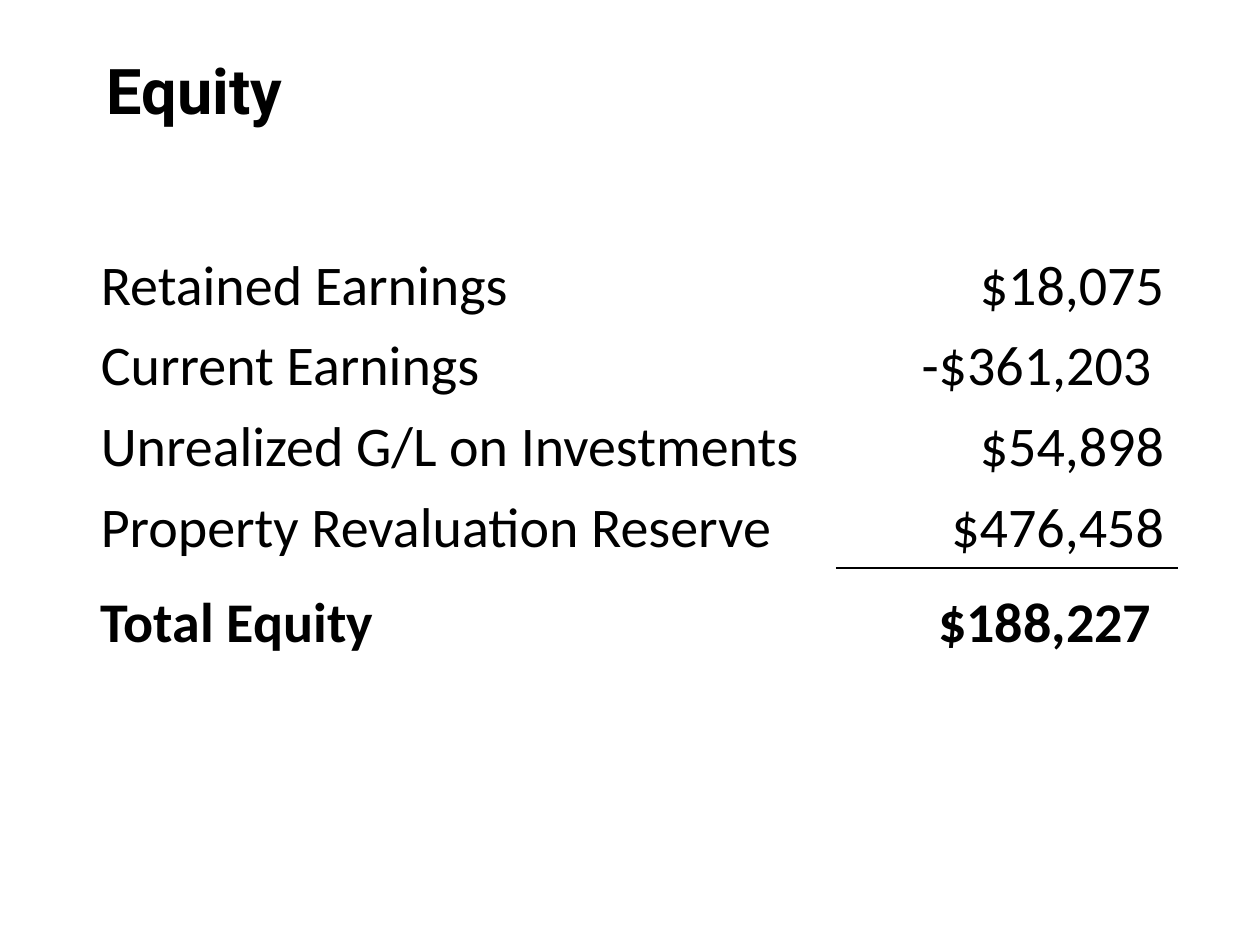
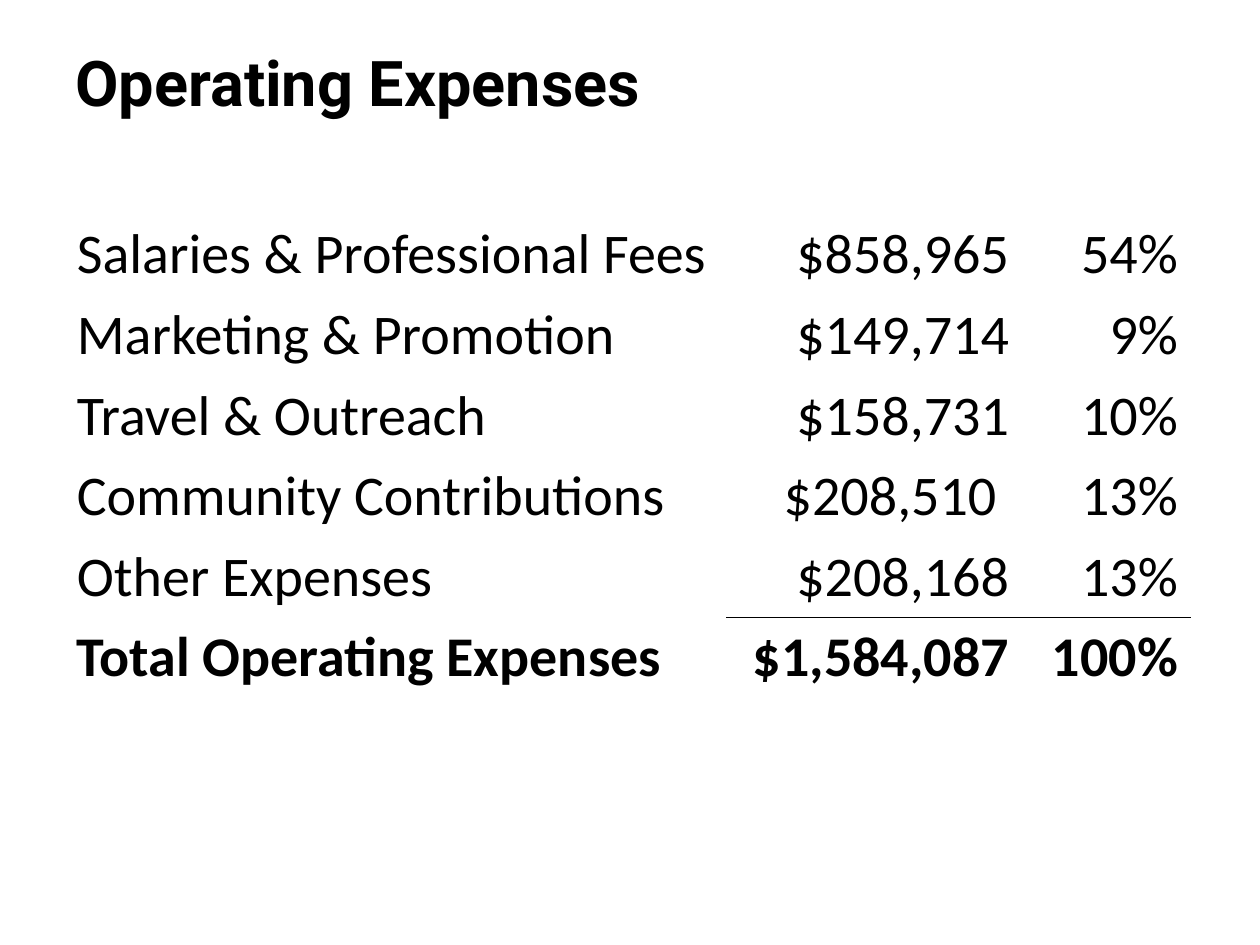
from pptx import Presentation
from pptx.dml.color import RGBColor
from pptx.enum.text import MSO_ANCHOR, PP_ALIGN
from pptx.oxml import parse_xml
from pptx.oxml.ns import nsdecls
from pptx.util import Inches, Pt

BLACK = RGBColor(0x00, 0x00, 0x00)
LEFT, RIGHT = PP_ALIGN.LEFT, PP_ALIGN.RIGHT
TOP, MIDDLE, BOTTOM = MSO_ANCHOR.TOP, MSO_ANCHOR.MIDDLE, MSO_ANCHOR.BOTTOM
TITLE_FONT = {"name": "Roboto", "size": Pt(36), "bold": True}
BODY_FONT = {"name": "Calibri", "size": Pt(32), "bold": False}
TOTAL_FONT = {**BODY_FONT, "bold": True}
ROW_HEIGHT = 0.64

EQUITY = [
    ("Retained Earnings", "$18,075"),
    ("Current Earnings", "-$361,203"),
    ("Unrealized G/L on Investments", "$54,898"),
    ("Property Revaluation Reserve", "$476,458"),
    ("Total Equity", "$188,227"),
]
EXPENSES = [
    ("Salaries & Professional Fees", "$858,965", "54%"),
    ("Marketing & Promotion", "$149,714", "9%"),
    ("Travel & Outreach", "$158,731", "10%"),
    ("Community Contributions", "$208,510", "13%"),
    ("Other Expenses", "$208,168", "13%"),
    ("Total Operating Expenses", "$1,584,087", "100%"),
]


class FinanceDeck:
    def __init__(self):
        self.deck = Presentation()
        self.deck.slide_width, self.deck.slide_height = Inches(10), Inches(7.5)
        self.page = None

    def add_page(self):
        self.page = self.deck.slides.add_slide(self.deck.slide_layouts[6])

    def add_text(self, frame, text, font, align=LEFT):
        para = frame.paragraphs[0]
        para.alignment = align
        span = para.add_run()
        span.text = text
        for name, value in font.items():
            setattr(span.font, name, value)
        span.font.color.rgb = BLACK

    def title(self, text, left, top):
        box = self.page.shapes.add_textbox(
            Inches(left), Inches(top), Inches(9), Inches(0.69))
        box.text_frame.word_wrap = True
        box.text_frame.vertical_anchor = MIDDLE
        self.add_text(box.text_frame, text, TITLE_FONT)

    def rule(self, cell, side):
        """Draw a thin line on the top (T) or bottom (B) edge of a cell."""
        line = parse_xml(
            f'<a:ln{side} {nsdecls("a")} w="12700"><a:solidFill>'
            f'<a:srgbClr val="{BLACK}"/></a:solidFill></a:ln{side}>')
        cell._tc.get_or_add_tcPr().insert(0, line)

    def statement(self, rows, left, top, widths, inset_rows,
                  total_height=ROW_HEIGHT, total_anchor=TOP):
        """Add a table with a ruled total; amounts in inset_rows sit further left."""
        last = len(rows) - 1
        heights = [ROW_HEIGHT] * last + [total_height]
        table = self.page.shapes.add_table(
            len(rows), len(widths), Inches(left), Inches(top),
            Inches(sum(widths)), Inches(sum(heights))).table
        table.first_row = table.horz_banding = False
        for column, width in zip(table.columns, widths):
            column.width = Inches(width)
        for row, height in zip(table.rows, heights):
            row.height = Inches(height)
        for r, values in enumerate(rows):
            for c, value in enumerate(values):
                cell = table.cell(r, c)
                cell.fill.background()
                cell.vertical_anchor = total_anchor if r == last else TOP
                if c == 1 and r in inset_rows:
                    cell.margin_right = Inches(0.2)
                self.add_text(cell.text_frame, value,
                              TOTAL_FONT if r == last else BODY_FONT,
                              RIGHT if c else LEFT)
                if c and r >= last - 1:
                    self.rule(cell, "T" if r == last else "B")


def main():
    finance = FinanceDeck()

    finance.add_page()
    finance.title("Equity", 0.75, 0.36)
    finance.statement(EQUITY, 0.7, 1.95, [5.94, 2.7], {1, 4},
                      total_height=0.76, total_anchor=BOTTOM)

    finance.add_page()
    finance.title("Operating Expenses", 0.5, 0.3)
    finance.statement(EXPENSES, 0.51, 1.7, [5.26, 2.34, 1.34], {3})

    finance.deck.save("out.pptx")


if __name__ == "__main__":
    main()
